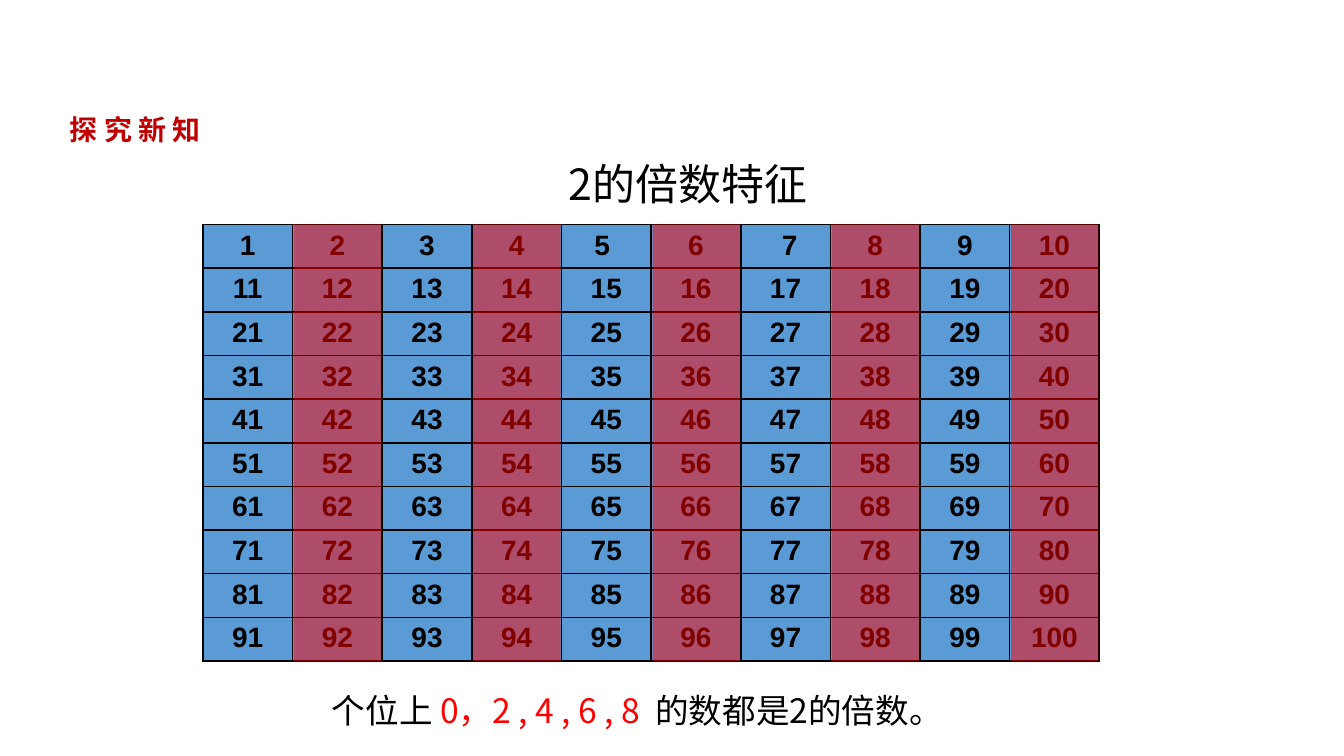
from dataclasses import dataclass

from lxml import etree
from pptx import Presentation
from pptx.dml.color import RGBColor
from pptx.enum.shapes import MSO_SHAPE
from pptx.enum.text import MSO_AUTO_SIZE, PP_ALIGN
from pptx.oxml.ns import qn
from pptx.util import Inches, Pt

RECTANGLE = MSO_SHAPE.RECTANGLE
CENTER = PP_ALIGN.CENTER
LEFT = PP_ALIGN.LEFT
FIT_SHAPE = MSO_AUTO_SIZE.SHAPE_TO_FIT_TEXT


@dataclass(frozen=True)
class Theme:
    """Colours, fonts and type sizes of the slide."""
    ink: str = "000000"
    cell: str = "5B9BD5"
    accent: str = "FF0000"
    heading: str = "C00000"
    number_font: str = "Arial"
    text_font: str = "Noto Sans CJK SC"
    small: int = 15
    medium: int = 18
    large: int = 23


THEME = Theme()
COUNT = 10
GRID_LEFT, GRID_TOP = 1.51, 1.67
GRID_WIDTH, GRID_HEIGHT = 6.67, 3.25
COLUMN, ROW = GRID_WIDTH / COUNT, GRID_HEIGHT / COUNT
EXTRA_MARGINS = {5: (0, 0.06), 7: (0.06, 0)}


def add_span(para, text, size, color, font, bold=False):
    """Append one formatted run to a paragraph."""
    span = para.add_run()
    span.text = text
    span.font.size = Pt(size)
    span.font.name = font
    span.font.bold = bold
    span.font.color.rgb = RGBColor.from_string(color)
    east_asian = etree.SubElement(span.font._element, qn("a:ea"))
    east_asian.set("typeface", font)


def add_text(page, left, top, width, height, spans, size,
             align=LEFT, bold=False, wrap=True):
    """Add a text box of (text, colour) spans and return its paragraph."""
    box = page.shapes.add_textbox(Inches(left), Inches(top), Inches(width), Inches(height))
    frame = box.text_frame
    frame.word_wrap = wrap
    frame.auto_size = FIT_SHAPE
    frame.margin_left = frame.margin_right = Inches(0.07)
    frame.margin_top = frame.margin_bottom = Inches(0.04)
    para = frame.paragraphs[0]
    para.alignment = align
    for text, color in spans:
        add_span(para, text, size, color, THEME.text_font, bold)
    return para


def set_borders(cell):
    """Draw a thin line on all four sides of a cell."""
    properties = cell._tc.get_or_add_tcPr()
    for index, side in enumerate(("a:lnL", "a:lnR", "a:lnT", "a:lnB")):
        line = etree.Element(qn(side), w=str(Pt(1)))
        fill = etree.SubElement(line, qn("a:solidFill"))
        etree.SubElement(fill, qn("a:srgbClr"), val=THEME.ink)
        properties.insert(index, line)


def fill_cell(cell, number):
    """Write a number into a cell and style it."""
    extra_left, extra_right = EXTRA_MARGINS.get(number, (0, 0))
    cell.margin_left = Inches(0.1 + extra_left)
    cell.margin_right = Inches(0.1 + extra_right)
    cell.margin_top = cell.margin_bottom = Inches(0.04)
    cell.fill.solid()
    cell.fill.fore_color.rgb = RGBColor.from_string(THEME.cell)
    set_borders(cell)
    para = cell.text_frame.paragraphs[0]
    para.alignment = CENTER
    add_span(para, str(number), THEME.small, THEME.ink, THEME.number_font, True)


def add_number_table(page):
    """Add the table of the numbers from 1 to 100."""
    table = page.shapes.add_table(
        COUNT, COUNT, Inches(GRID_LEFT), Inches(GRID_TOP),
        Inches(GRID_WIDTH), Inches(GRID_HEIGHT)).table
    table.first_row = table.horz_banding = False
    for column in table.columns:
        column.width = Inches(COLUMN)
    for row in table.rows:
        row.height = Inches(ROW)
    for number, cell in enumerate(table.iter_cells(), start=1):
        fill_cell(cell, number)


def add_highlight(page, row, column):
    """Cover one table cell with a half-transparent rectangle."""
    box = page.shapes.add_shape(
        RECTANGLE, Inches(GRID_LEFT + column * COLUMN + 0.01),
        Inches(GRID_TOP + row * ROW), Inches(0.65), Inches(ROW))
    box.shadow.inherit = False
    box.line.fill.background()
    box.fill.solid()
    box.fill.fore_color.rgb = RGBColor.from_string(THEME.accent)
    color = box._element.spPr.find(qn("a:solidFill"))[0]
    etree.SubElement(color, qn("a:alpha"), val="50000")


def main():
    """Build the slide and save the deck."""
    deck = Presentation()
    deck.slide_width = Inches(10)
    deck.slide_height = Inches(10 * 9 / 16)
    page = deck.slides.add_slide(deck.slide_layouts[6])

    add_number_table(page)
    add_text(page, 2.4, 5.09, 5.98, 0.38,
             [("个位上 ", THEME.ink),
              ("0，2 , 4 , 6 , 8  ", THEME.accent),
              ("的数都是2的倍数。", THEME.ink)], THEME.medium)
    title = add_text(page, 0.83, 0.94, 8.58, 0.66,
                     [("2的倍数特征", THEME.ink)], THEME.large, CENTER)
    title.line_spacing = 1.5

    for column in range(1, COUNT, 2):
        for row in range(COUNT):
            add_highlight(page, row, column)

    heading = add_text(page, 0.07, 0.8, 1.56, 0.33,
                       [("探 究 新 知", THEME.heading)], THEME.small,
                       bold=True, wrap=False)
    heading.level = 1
    heading._p.get_or_add_pPr().set("marL", str(Inches(0.38)))
    deck.save("out.pptx")


if __name__ == "__main__":
    main()
